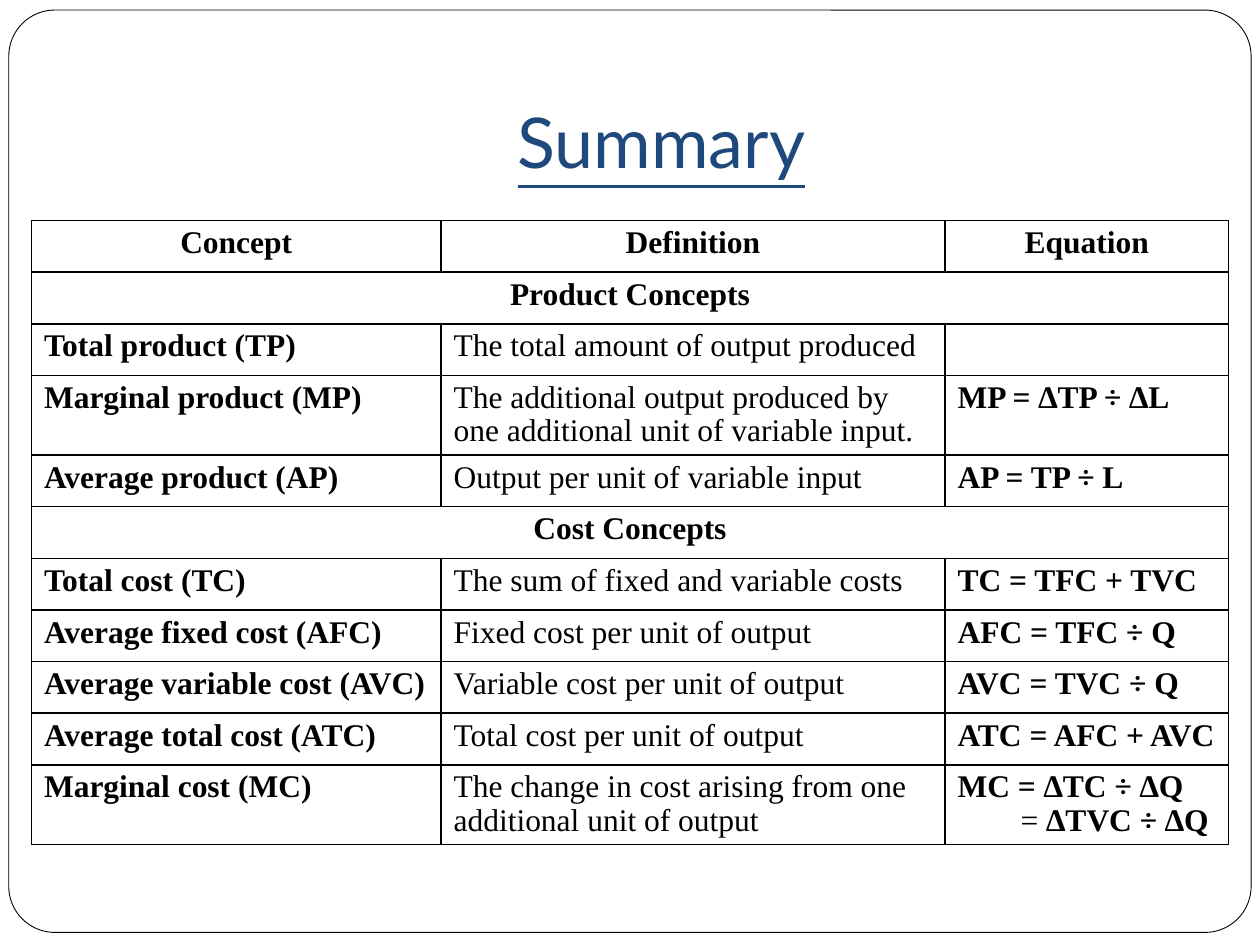
import pptx
import pptx.util
import pptx.dml.color
import pptx.enum.shapes
import pptx.enum.text
import pptx.oxml
import pptx.oxml.ns
from pptx.util import Inches

COLORS = {"black": "000000", "white": "FFFFFF", "title": "1F497D"}
ALIGN = pptx.enum.text.PP_ALIGN


def rgb(name):
    return pptx.dml.color.RGBColor.from_string(COLORS[name])


def add_borders(cell):
    properties = cell._tc.get_or_add_tcPr()
    for side in ("lnL", "lnR", "lnT", "lnB"):
        properties.append(pptx.oxml.parse_xml(
            f'<a:{side} {pptx.oxml.ns.nsdecls("a")} w="12700"><a:solidFill>'
            f'<a:srgbClr val="{COLORS["black"]}"/></a:solidFill></a:{side}>'))


deck = pptx.Presentation()
deck.slide_width, deck.slide_height = Inches(10), Inches(7.5)
page = deck.slides.add_slide(deck.slide_layouts[5])

# Rounded frame behind everything
frame = page.shapes.add_shape(
    pptx.enum.shapes.MSO_SHAPE.ROUNDED_RECTANGLE,
    Inches(0.07), Inches(0.08), Inches(9.86), Inches(7.32))
frame.adjustments[0] = 0.05
frame.shadow.inherit = False
frame.fill.solid()
frame.fill.fore_color.rgb = rgb("white")
frame.line.color.rgb = rgb("black")
frame.line.width = pptx.util.Pt(0.5)
page.shapes._spTree.insert(2, frame._element)

# Title
title = page.shapes.title
title.left, title.top = Inches(1), Inches(0.3)
title.width, title.height = Inches(8.5), Inches(1.25)
title.text_frame.text = "Summary"
title.text_frame.vertical_anchor = pptx.enum.text.MSO_ANCHOR.BOTTOM
title.text_frame.margin_bottom = Inches(0.1)
para = title.text_frame.paragraphs[0]
para.alignment = ALIGN.CENTER
font = para.runs[0].font
font.name, font.size, font.underline = "Lato", pptx.util.Pt(40), True
font.color.rgb = rgb("title")

# Table: a row with a single entry is a section heading across all columns
rows = [
    ("Concept", "Definition", "Equation"),
    ("Product Concepts",),
    ("Total product (TP)", "The total amount of output produced", ""),
    ("Marginal product (MP)",
     "The additional output produced by one additional unit of variable input.",
     "MP = ∆TP ÷ ∆L"),
    ("Average product (AP)", "Output per unit of variable input", "AP = TP ÷ L"),
    ("Cost Concepts",),
    ("Total cost (TC)", "The sum of fixed and variable costs", "TC = TFC + TVC"),
    ("Average fixed cost (AFC)", "Fixed cost per unit of output", "AFC = TFC ÷ Q"),
    ("Average variable cost (AVC)", "Variable cost per unit of output",
     "AVC = TVC ÷ Q"),
    ("Average total cost (ATC)", "Total cost per unit of output",
     "ATC = AFC + AVC"),
    ("Marginal cost (MC)",
     "The change in cost arising from one additional unit of output",
     "MC = ∆TC ÷ ∆Q\n= ∆TVC ÷ ∆Q"),
]
table = page.shapes.add_table(
    len(rows), 3, Inches(0.25), Inches(1.75),
    Inches(9.5), Inches(0.41) * len(rows)).table
for column, width in zip(table.columns, (3.25, 4, 2.25)):
    column.width = Inches(width)

for row_index, entries in enumerate(rows):
    is_section = len(entries) == 1
    if is_section:
        table.cell(row_index, 0).merge(table.cell(row_index, 2))
    for column_index in range(3):
        cell = table.cell(row_index, column_index)
        add_borders(cell)
        cell.fill.background()
        if column_index >= len(entries):
            continue
        cell.text_frame.text = entries[column_index]
        is_heading = row_index == 0 or is_section
        for para in cell.text_frame.paragraphs:
            para.alignment = ALIGN.CENTER if is_heading else ALIGN.LEFT
            para.line_spacing = 0.96
            para.font.size = pptx.util.Pt(18)
            for span in para.runs:
                span.font.name = "Times New Roman"
                span.font.size = pptx.util.Pt(18)
                span.font.bold = is_heading or column_index != 1
                span.font.color.rgb = rgb("black")

# Second line of the marginal cost equation: indented, with a regular equals sign
para = table.cell(len(rows) - 1, 2).text_frame.paragraphs[1]
para._p.get_or_add_pPr().set("marL", str(Inches(0.5)))
equals = para.runs[0]
formula = para.add_run()
formula.text = "∆TVC ÷ ∆Q"
formula.font.name, formula.font.size = equals.font.name, equals.font.size
formula.font.bold = True
formula.font.color.rgb = rgb("black")
equals.text = "= "
equals.font.bold = False

deck.save("out.pptx")
